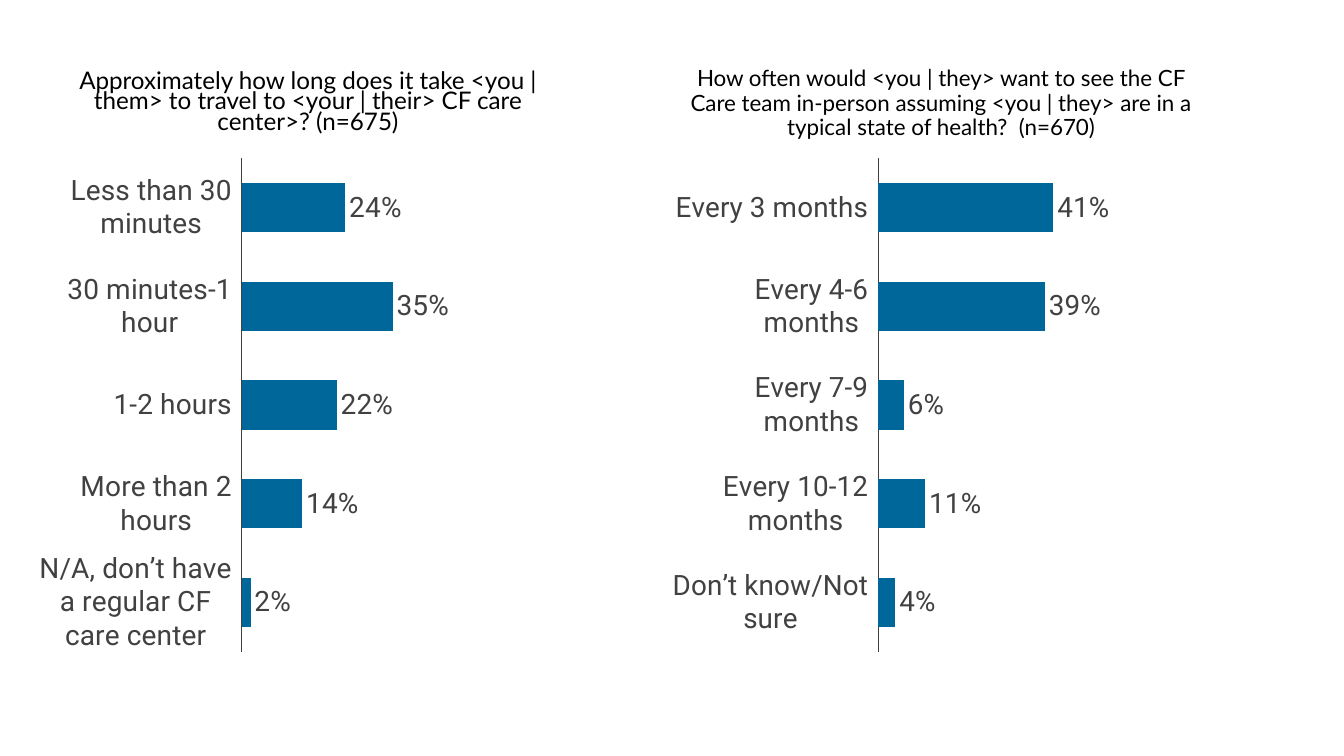
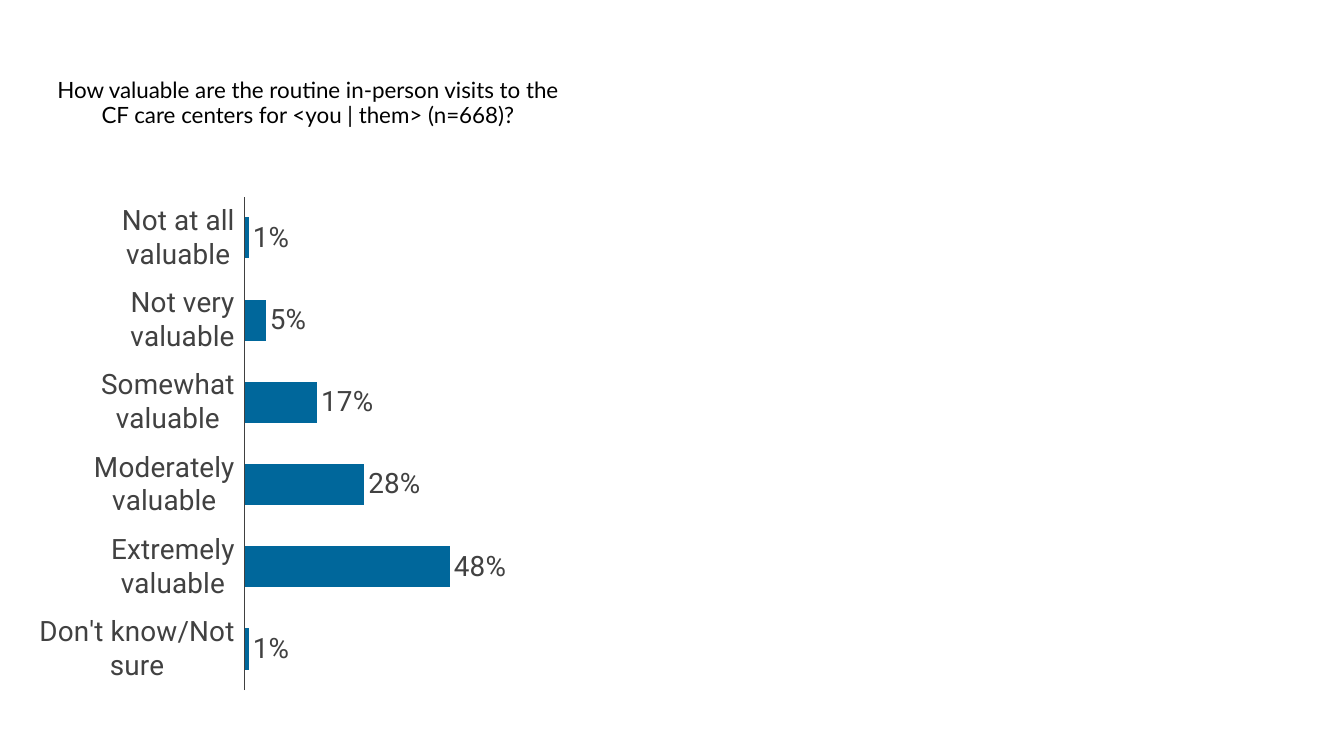
from dataclasses import dataclass

from pptx import Presentation
from pptx.chart.data import CategoryChartData
from pptx.dml.color import RGBColor
from pptx.enum.chart import XL_CHART_TYPE, XL_LABEL_POSITION, XL_TICK_LABEL_POSITION, XL_TICK_MARK
from pptx.enum.text import MSO_ANCHOR, MSO_AUTO_SIZE, PP_ALIGN
from pptx.oxml import parse_xml
from pptx.oxml.ns import nsdecls
from pptx.util import Inches, Pt


@dataclass(frozen=True)
class Theme:
    ink: RGBColor = RGBColor(0, 0, 0)
    label: RGBColor = RGBColor(0x41, 0x41, 0x41)
    axis: RGBColor = RGBColor(0x40, 0x40, 0x40)
    bar: RGBColor = RGBColor(0x00, 0x67, 0x9B)
    question_font: str = "Lato"
    chart_font: str = "Roboto"
    question_size: float = 16
    label_size: float = 20
    axis_width: float = 0.75


# Shared geometry, in inches; the plot area is in fractions of the chart
COLUMNS = (0.39, 6.67)
QUESTION_TOP, QUESTION_W, QUESTION_H = 0.68, 5.33, 0.7
CHART_W, CHART_H = 6.28, 5.1
PLOT_AREA = {"x": 0.32, "y": 0.02, "w": 0.68, "h": 0.96}


def apply(target, values):
    for name, value in values.items():
        setattr(target, name, value)


class Deck:
    def __init__(self, theme):
        self.theme = theme
        self.prs = Presentation()
        self.prs.slide_width = Inches(13.33)
        self.prs.slide_height = Inches(7.5)
        self.slide = None

    def new_slide(self):
        self.slide = self.prs.slides.add_slide(self.prs.slide_layouts[5])

    def set_font(self, font, name, size, color):
        apply(font, {"name": name, "size": Pt(size), "bold": False})
        font.color.rgb = color

    def question(self, column, text, size=None, spacing=0.9):
        """The first column's question is the slide title."""
        box = [Inches(v) for v in (COLUMNS[column], QUESTION_TOP, QUESTION_W, QUESTION_H)]
        if column == 0:
            sp = self.slide.shapes.title
            apply(sp, dict(zip(("left", "top", "width", "height"), box)))
        else:
            sp = self.slide.shapes.add_textbox(*box)
        tf = sp.text_frame
        apply(tf, {"word_wrap": True, "auto_size": MSO_AUTO_SIZE.NONE,
                   "vertical_anchor": MSO_ANCHOR.MIDDLE})
        apply(tf, {f"margin_{side}": Inches(0.13) for side in ("left", "top", "right", "bottom")})
        p = tf.paragraphs[0]
        apply(p, {"alignment": PP_ALIGN.CENTER, "line_spacing": spacing, "space_before": Pt(0)})
        r = p.add_run()
        r.text = text
        self.set_font(r.font, self.theme.question_font, size or self.theme.question_size,
                      self.theme.ink)

    def bar_chart(self, column, top, answers):
        t = self.theme
        data = CategoryChartData(number_format="0%")
        data.categories = list(answers)
        data.add_series("Series 1", list(answers.values()))
        chart = self.slide.shapes.add_chart(
            XL_CHART_TYPE.BAR_CLUSTERED, Inches(COLUMNS[column]), Inches(top),
            Inches(CHART_W), Inches(CHART_H), data).chart
        apply(chart, {"has_title": False, "has_legend": False})
        self.set_font(chart.font, t.chart_font, t.label_size, t.label)

        # Axes
        cat = chart.category_axis
        apply(cat, {"reverse_order": True, "has_major_gridlines": False,
                    "major_tick_mark": XL_TICK_MARK.NONE, "minor_tick_mark": XL_TICK_MARK.NONE,
                    "tick_label_position": XL_TICK_LABEL_POSITION.LOW})
        cat.format.line.color.rgb = t.axis
        cat.format.line.width = Pt(t.axis_width)
        self.set_font(cat.tick_labels.font, t.chart_font, t.label_size, t.label)
        apply(chart.value_axis, {"visible": False, "has_major_gridlines": False,
                                 "minimum_scale": 0, "maximum_scale": 1})

        # Bars and their labels
        plot = chart.plots[0]
        apply(plot, {"gap_width": 100, "vary_by_categories": False, "has_data_labels": True})
        fill = plot.series[0].format.fill
        fill.solid()
        fill.fore_color.rgb = t.bar
        labels = plot.data_labels
        apply(labels, {"show_value": True, "position": XL_LABEL_POSITION.OUTSIDE_END,
                       "number_format": "0%", "number_format_is_linked": False})
        self.set_font(labels.font, t.chart_font, t.label_size, t.label)
        self.fix_plot_area(chart)

    def fix_plot_area(self, chart):
        area = chart._chartSpace.xpath("c:chart/c:plotArea")[0]
        for old in area.xpath("c:layout"):
            area.remove(old)
        modes = "".join(f'<c:{k}Mode val="edge"/>' for k in "xy")
        sizes = "".join(f'<c:{k} val="{v}"/>' for k, v in PLOT_AREA.items())
        area.insert(0, parse_xml(
            f'<c:layout {nsdecls("c")}><c:manualLayout><c:layoutTarget val="inner"/>'
            f'{modes}{sizes}</c:manualLayout></c:layout>'))


def main():
    deck = Deck(Theme())

    # Slide 1: travel time and preferred visit frequency
    deck.new_slide()
    deck.bar_chart(0, 1.47, {
        "Less than 30 minutes": 0.24,
        "30 minutes-1 hour": 0.35,
        "1-2 hours": 0.22,
        "More than 2 hours": 0.14,
        "N/A, don’t have a regular CF care center": 0.02,
    })
    deck.bar_chart(1, 1.47, {
        "Every 3 months": 0.41,
        "Every 4-6 months": 0.39,
        "Every 7-9 months": 0.06,
        "Every 10-12 months": 0.11,
        "Don’t know/Not sure": 0.04,
    })
    deck.question(0, "Approximately how long does it take <you | them> to travel to "
                     "<your | their> CF care center>? (n=675)", size=17.3, spacing=0.7)
    deck.question(1, "How often would <you | they> want to see the CF Care team in-person "
                     "assuming <you | they> are in a typical state of health?  (n=670)")

    # Slide 2: value of in-person visits
    deck.new_slide()
    deck.question(0, "How valuable are the routine in-person visits to the CF care centers "
                     "for <you | them> (n=668)?")
    deck.bar_chart(0, 1.85, {
        "Not at all valuable": 0.01,
        "Not very valuable": 0.05,
        "Somewhat valuable": 0.17,
        "Moderately valuable": 0.28,
        "Extremely valuable": 0.48,
        "Don't know/Not sure": 0.01,
    })

    deck.prs.save("out.pptx")


if __name__ == "__main__":
    main()
